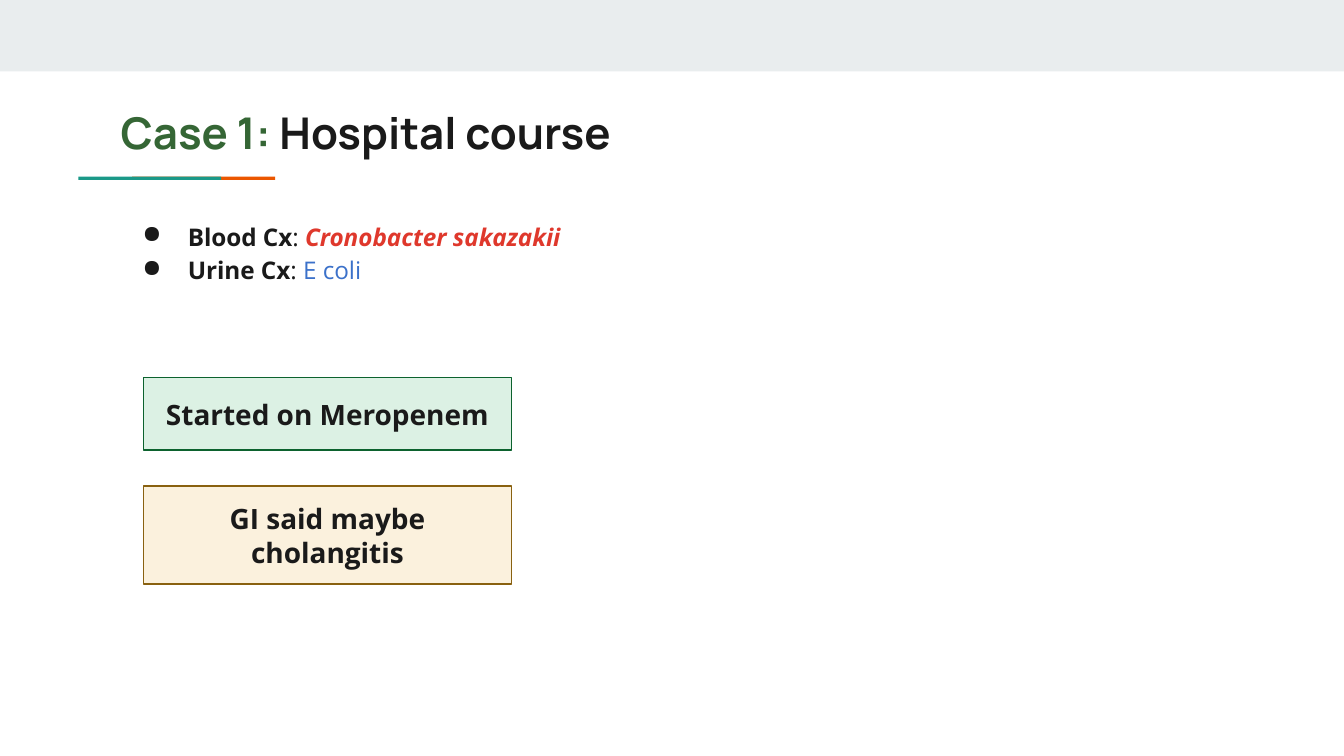
from lxml.etree import SubElement
from pptx import Presentation
from pptx.dml.color import RGBColor
from pptx.enum.shapes import MSO_SHAPE
from pptx.enum.text import MSO_ANCHOR, PP_ALIGN
from pptx.oxml.ns import qn
from pptx.util import Cm, Pt

INK = "1A1A1A"
SANS = "Open Sans"


def color(code):
    return RGBColor.from_string(code)


def rect(slide, x, y, w, h, fill, edge=None):
    shape = slide.shapes.add_shape(
        MSO_SHAPE.RECTANGLE, Cm(x), Cm(y), Cm(w), Cm(h))
    shape.shadow.inherit = False
    shape.fill.solid()
    shape.fill.fore_color.rgb = color(fill)
    if edge:
        shape.line.color.rgb = color(edge)
        shape.line.width = Pt(0.75)
    else:
        shape.line.fill.background()
    return shape


def setup(frame, anchor):
    frame.word_wrap = True
    frame.vertical_anchor = anchor
    frame.margin_left = frame.margin_right = Cm(0.25)
    frame.margin_top = frame.margin_bottom = Cm(0.25)


def textbox(slide, x, y, w, h):
    frame = slide.shapes.add_textbox(Cm(x), Cm(y), Cm(w), Cm(h)).text_frame
    setup(frame, MSO_ANCHOR.TOP)
    return frame


def style(para, name, size, bold=None):
    para.font.name = name
    para.font.size = Pt(size)
    para.font.bold = bold


def add_run(para, text, code, bold=None, italic=None):
    run = para.add_run()
    run.text = text
    run.font.color.rgb = color(code)
    run.font.bold = bold
    run.font.italic = italic


def bullet(para):
    props = para._p.get_or_add_pPr()
    props.set("marL", str(Cm(1.27)))
    props.set("indent", str(Cm(-0.86)))
    tint = SubElement(props, qn("a:buClr"))
    SubElement(tint, qn("a:srgbClr"), val=INK)
    SubElement(props, qn("a:buChar"), char="●")


def title(slide):
    para = textbox(slide, 2.03, 1.75, 21.36, 1.5).paragraphs[0]
    style(para, "Manrope", 23.4, True)
    add_run(para, "Case 1:", "356635")
    add_run(para, " Hospital course", INK)


def cultures(slide, rows):
    frame = textbox(slide, 2.03, 3.86, 9.65, 4.83)
    for i, (label, germ, code, strong) in enumerate(rows):
        para = frame.add_paragraph() if i else frame.paragraphs[0]
        bullet(para)
        para.line_spacing = 1.15
        style(para, SANS, 13)
        add_run(para, label, INK, True)
        add_run(para, ": ", INK)
        add_run(para, germ, code, strong, strong)


def card(slide, y, h, text, fill, edge):
    frame = rect(slide, 2.71, y, 6.96, h, fill, edge).text_frame
    setup(frame, MSO_ANCHOR.MIDDLE)
    para = frame.paragraphs[0]
    para.text = text
    para.alignment = PP_ALIGN.CENTER
    style(para, SANS, 15, True)
    para.font.color.rgb = color(INK)


def main():
    deck = Presentation()
    deck.slide_width, deck.slide_height = Cm(25.4), Cm(14.29)
    slide = deck.slides.add_slide(deck.slide_layouts[6])
    rect(slide, 0, 0, 25.4, 1.35, "E9EDEE")
    for x, fill in ((2.5, "EB5600"), (1.48, "1A9988")):
        rect(slide, x, 3.34, 2.7, 0.06, fill)
    title(slide)
    cultures(slide, [
        ("Blood Cx", "Cronobacter sakazakii", "DF382C", True),
        ("Urine Cx", "E coli", "3B71CA", None),
    ])
    card(slide, 7.14, 1.37, "Started on Meropenem", "DCF1E4", "0C622E")
    card(slide, 9.19, 1.85, "GI said maybe cholangitis", "FBF1DD", "896110")
    deck.save("out.pptx")


if __name__ == "__main__":
    main()
